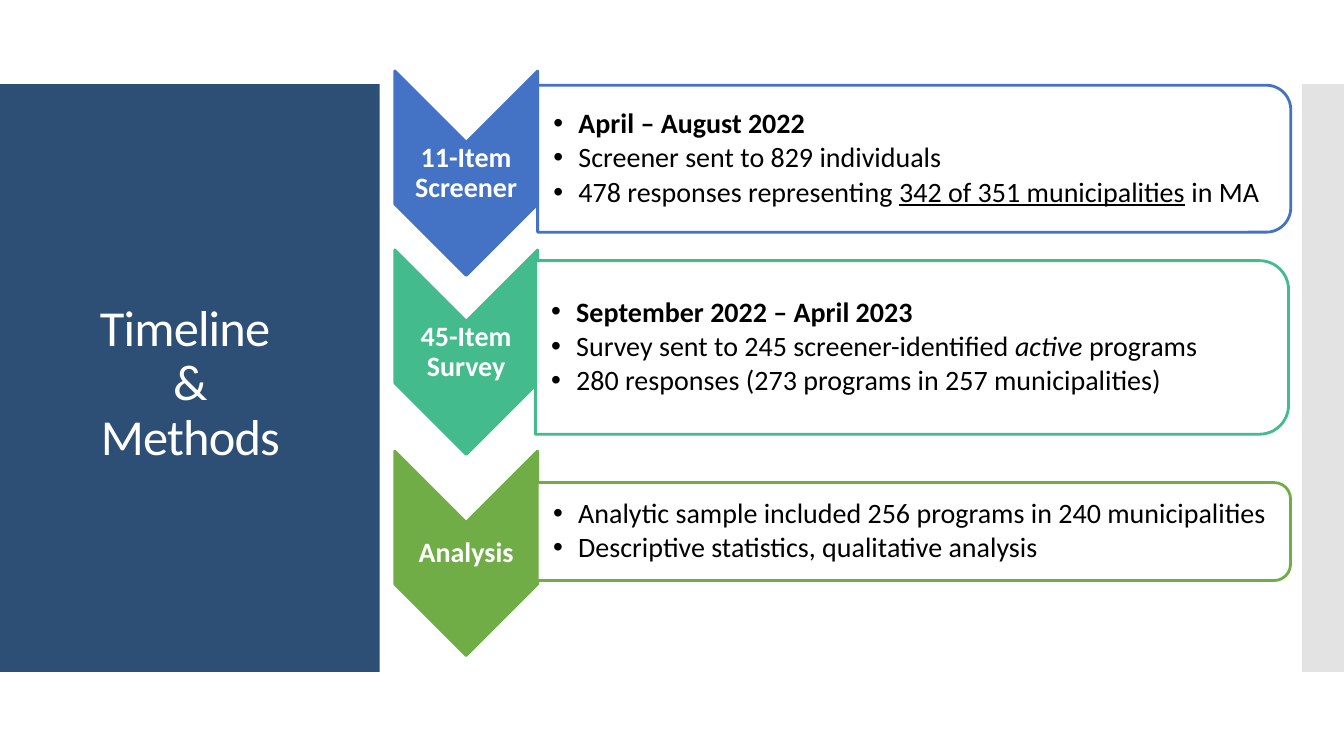
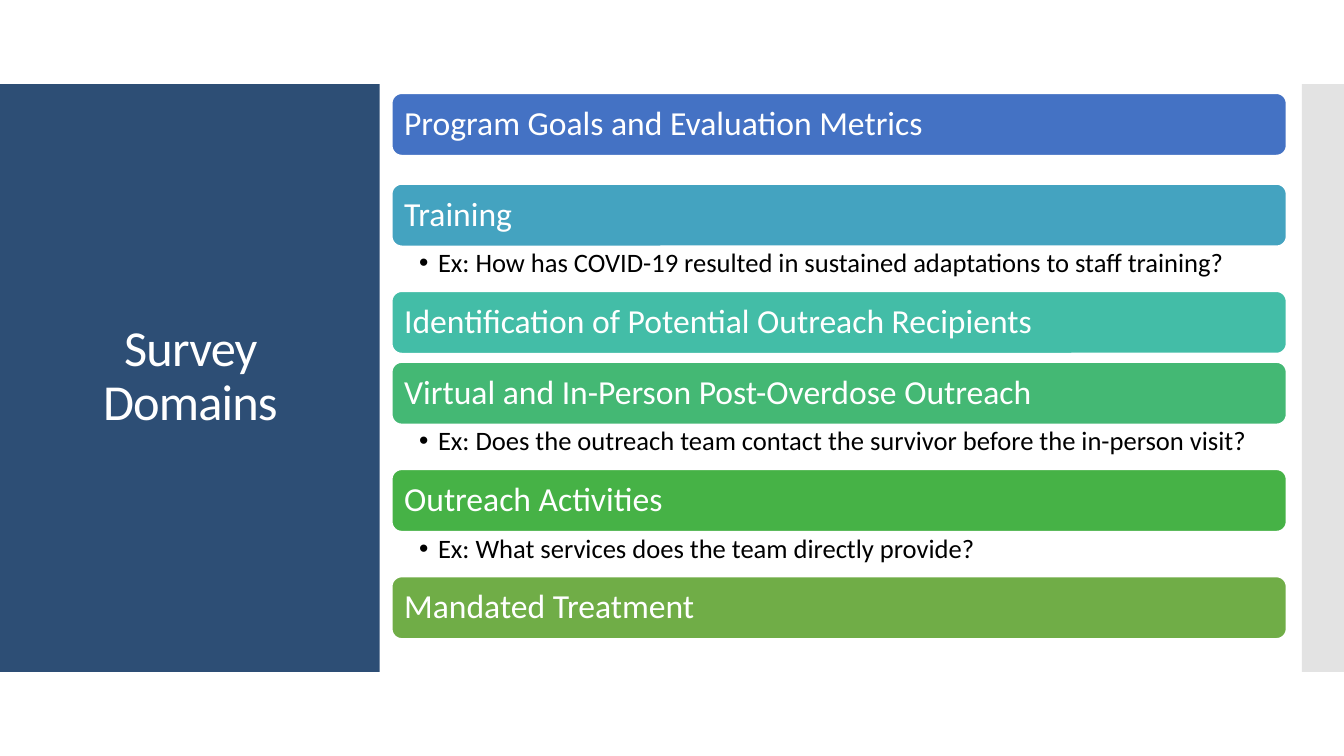
"""Build two slides on the timeline, methods and domains of a survey."""
import pptx
import pptx.util
import pptx.dml.color
import pptx.enum.shapes
import pptx.enum.text
import pptx.oxml.ns
import lxml.etree

Pt = pptx.util.Pt
qn = pptx.oxml.ns.qn
kinds = pptx.enum.shapes.MSO_SHAPE
sides = pptx.enum.text.PP_ALIGN
spots = pptx.enum.text.MSO_ANCHOR


def paint(fill, color, alpha=100):
    fill.solid()
    fill.fore_color.rgb = pptx.dml.color.RGBColor.from_string(color)
    if alpha < 100:
        for node in fill._xPr.iter(qn("a:srgbClr")):
            lxml.etree.SubElement(node, qn("a:alpha"), val=str(alpha * 1000))


def write(shape, lines, size=20, color="000000", bold=None, align=sides.LEFT,
          anchor=spots.MIDDLE, inset=(1, 1, 1, 1), after=0, hang=0):
    frame = shape.text_frame
    frame.word_wrap = True
    frame.auto_size = pptx.enum.text.MSO_AUTO_SIZE.NONE
    frame.vertical_anchor = anchor
    frame.margin_left, frame.margin_top, frame.margin_right, frame.margin_bottom = map(Pt, inset)
    for num, line in enumerate(lines):
        para = frame.add_paragraph() if num else frame.paragraphs[0]
        para.alignment = align
        para.line_spacing = 0.9
        para.space_after = Pt(after)
        if hang:
            props = para._p.get_or_add_pPr()
            props.set("marL", str(Pt(hang)))
            props.set("indent", str(-Pt(hang)))
            lxml.etree.SubElement(props, qn("a:buFont"), typeface="Arial")
            lxml.etree.SubElement(props, qn("a:buChar"), char="•")
        if isinstance(line, str):
            para.text = line
        else:
            for text, mark in line:
                run = para.add_run()
                run.text = text
                if mark:
                    setattr(run.font, mark, True)
        for run in para.runs:
            run.font.name = "Calibri"
            run.font.size = Pt(size)
            if bold:
                run.font.bold = True
            paint(run.font.fill, color)


deck = pptx.Presentation()
deck.slide_width, deck.slide_height = Pt(960), Pt(540)
layout = deck.slide_layouts[5]
style = deck.slide_master.element.find(".//" + qn("p:titleStyle") + "//" + qn("a:defRPr"))
style.set("sz", "3600")
style.set("spc", "-60")

heads = [("Timeline \v&\vMethods", 8, 89, 256, 371), ("Survey Domains", 23, 88.5, 226, 362)]
slides = []
for text, left, top, width, height in heads:
    slide = deck.slides.add_slide(layout)
    title = slide.shapes.title
    title.left, title.top, title.width, title.height = map(Pt, (left, top, width, height))
    write(title, [text], size=36, color="FFFFFF", align=sides.CENTER, inset=(3.6,) * 4)
    slides.append(slide)
steps, topics = slides

bands = [(0, 271.2, "2D4E75", 100), (930, 30, "C8C8C8", 50)]
for spot, (left, width, color, alpha) in enumerate(bands, 2):
    band = steps.shapes.add_shape(kinds.RECTANGLE, Pt(left), Pt(60), Pt(width), Pt(420))
    band.shadow.inherit = False
    paint(band.fill, color, alpha)
    band.line.fill.background()
    layout.shapes.element.insert(spot, band.element)

stages = [
    ("11-Item Screener", "4472C4", 123.7, 653, 113.4, 105, [
        [("April – August 2022", "bold")],
        "Screener sent to 829 individuals",
        [("478 responses representing ", None), ("342 of 351 municipalities", "underline"),
         (" in MA", None)]]),
    ("45-Item Survey", "43BB8D", 251.5, 651.4, 248.2, 124, [
        [("September 2022 – April 2023", "bold")],
        [("Survey sent to 245 screener-identified ", None), ("active", "italic"),
         (" programs", None)],
        "280 responses (273 programs in 257 municipalities)"]),
    ("Analysis", "70AD47", 395.2, 652.8, 379.7, 70, [
        "Analytic sample included 256 programs in 240 municipalities",
        "Descriptive statistics, qualitative analysis"]),
]
long = 538
for name, color, tip, mid, row, deep, facts in stages:
    parts = [(kinds.CHEVRON, 333, tip, 146, 102, color, 100),
             (kinds.ROUND_2_SAME_RECTANGLE, mid, row, deep, long, "FFFFFF", 90)]
    for kind, across, down, width, height, fill, alpha in parts:
        part = steps.shapes.add_shape(kind, Pt(across - width / 2), Pt(down - height / 2),
                                      Pt(width), Pt(height))
        part.rotation = 90
        part.shadow.inherit = False
        paint(part.fill, fill, alpha)
        paint(part.line.fill, color)
        part.line.width = Pt(2)
    label = steps.shapes.add_textbox(Pt(282), Pt(tip - 22), Pt(102), Pt(44))
    write(label, [name], color="FFFFFF", bold=True, align=sides.CENTER, after=7)
    box = steps.shapes.add_textbox(Pt(mid - long / 2), Pt(row - deep / 2 + 5),
                                   Pt(533), Pt(deep - 10))
    write(box, facts, inset=(11.2, 1, 1, 1), after=3, hang=18)

themes = [
    ("Program Goals and Evaluation Metrics", "4472C4", 19.4, None),
    ("Training", "44A3C0", 31.2,
     "Ex: How has COVID-19 resulted in sustained adaptations to staff training?"),
    ("Identification of Potential Outreach Recipients", "43BDA7", 5.2, None),
    ("Virtual and In-Person Post-Overdose Outreach", "44B874", 31.2,
     "Ex: Does the outreach team contact the survivor before the in-person visit?"),
    ("Outreach Activities", "46B246", 31.2, "Ex: What services does the team directly provide?"),
    ("Mandated Treatment", "70AD47", 0, None),
]
left, top, width, height = 279.4, 66.2, 640, 45.4
for name, color, gap, sample in themes:
    bar = topics.shapes.add_shape(kinds.ROUNDED_RECTANGLE, Pt(left), Pt(top), Pt(width), Pt(height))
    bar.shadow.inherit = False
    paint(bar.fill, color)
    paint(bar.line.fill, "FFFFFF")
    bar.line.width = Pt(2)
    write(bar, [name], size=24, color="FFFFFF", inset=(7.2,) * 4, after=8.4)
    top += height
    if sample:
        note = topics.shapes.add_textbox(Pt(left), Pt(top), Pt(width), Pt(gap))
        write(note, [sample], size=19, anchor=spots.TOP, inset=(20, 2, 13.5, 2),
              after=3.8, hang=13.5)
    top += gap

deck.save("out.pptx")
